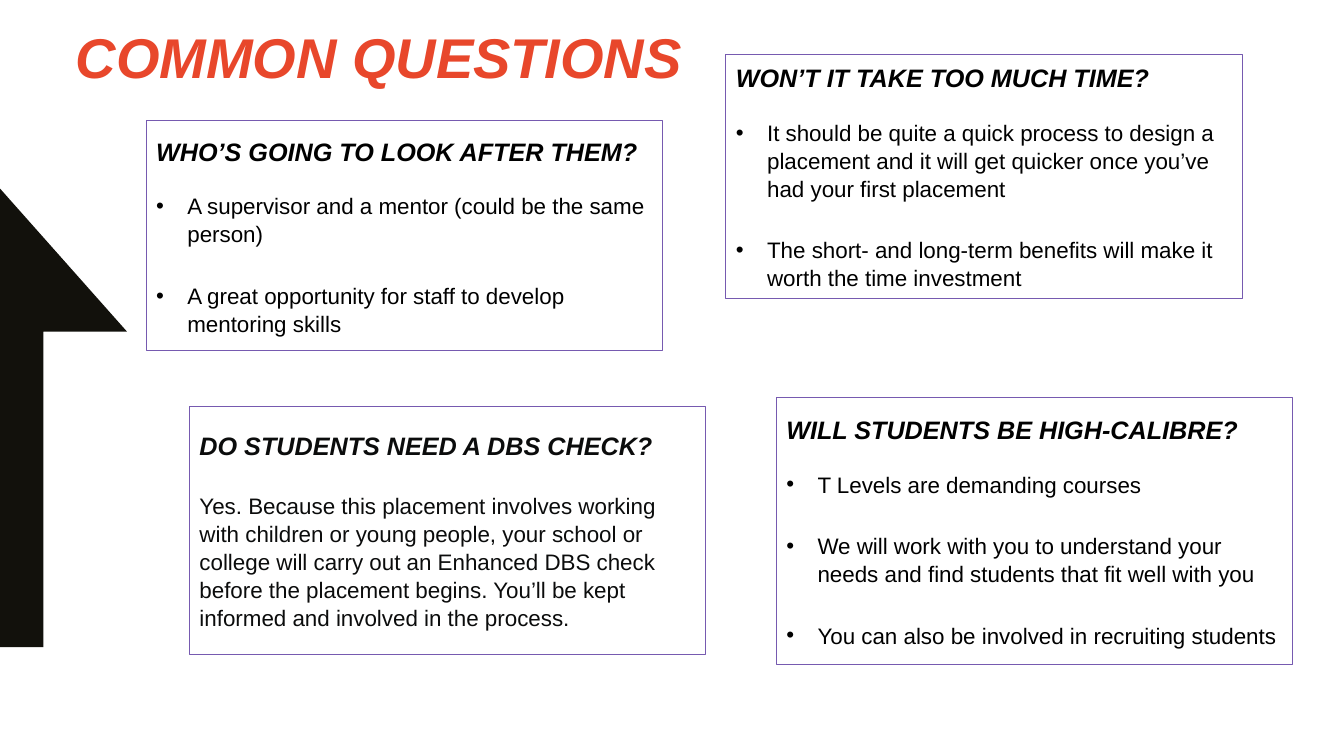
"""Build the Common Questions slide."""
from lxml.etree import SubElement
from pptx import Presentation
from pptx.dml.color import RGBColor
from pptx.enum.shapes import MSO_SHAPE
from pptx.enum.text import MSO_ANCHOR, MSO_AUTO_SIZE, PP_ALIGN
from pptx.oxml.ns import qn
from pptx.util import Inches, Pt

COLORS = {
    "title": "E8472B",
    "arrow": "12110C",
    "border": "765AB0",
    "text": "000000",
    "soft_text": "0B0C0C",
}


def write_paragraph(paragraph, text, size=16, color="text", strong=False,
                    before=None, after=0, line_spacing=1.04, bullet=False):
    """Fill a left-aligned paragraph with formatted text."""
    paragraph.text = text
    paragraph.alignment = PP_ALIGN.LEFT
    paragraph.line_spacing = line_spacing
    paragraph.space_after = Pt(after)
    if before is not None:
        paragraph.space_before = Pt(before)
    if bullet:
        properties = paragraph._p.get_or_add_pPr()
        properties.set("marL", str(Inches(0.31)))
        properties.set("indent", str(Inches(-0.31)))
        SubElement(properties, qn("a:buFont")).set("typeface", "Arial")
        SubElement(properties, qn("a:buChar")).set("char", "•")
    font = paragraph.font
    font.name = "Arial"
    font.size = Pt(size)
    font.bold = font.italic = strong
    font.color.rgb = RGBColor.from_string(COLORS[color])


presentation = Presentation()
presentation.slide_width = Inches(13.33)
presentation.slide_height = Inches(7.5)
slide = presentation.slides.add_slide(presentation.slide_layouts[5])

arrow_points = [(1.26, 3.29), (0, 1.87), (0, 6.42), (0.43, 6.42), (0.43, 3.29)]
corners = [(Inches(x), Inches(y)) for x, y in arrow_points]
builder = slide.shapes.build_freeform(*corners[0])
builder.add_line_segments(corners[1:], close=True)
arrow = builder.convert_to_shape()
arrow.shadow.inherit = False
arrow.fill.solid()
arrow.fill.fore_color.rgb = RGBColor.from_string(COLORS["arrow"])
arrow.line.fill.background()

title = slide.shapes.title
title.left, title.top = Inches(0.65), Inches(0.17)
title.width, title.height = Inches(6.6), Inches(0.77)
title.text_frame.auto_size = MSO_AUTO_SIZE.NONE
title.text_frame.vertical_anchor = MSO_ANCHOR.TOP
write_paragraph(title.text_frame.paragraphs[0], "COMMON QUESTIONS", size=40,
                color="title", strong=True, line_spacing=1.0)

bullet_format = {"before": 12, "after": 12, "bullet": True}
plain_format = {"before": 21.5, "color": "soft_text"}
questions = [
    (1.45, 1.2, 2.28, "WHO’S GOING TO LOOK AFTER THEM?", "text", 6, bullet_format, [
        "A supervisor and a mentor (could be the same person)",
        "A great opportunity for staff to develop mentoring skills",
    ]),
    (7.2, 0.54, 2.42, "WON’T IT TAKE TOO MUCH TIME?", "text", 6, bullet_format, [
        "It should be quite a quick process to design a placement and it will "
        "get quicker once you’ve had your first placement",
        "The short- and long-term benefits will make it worth the time investment",
    ]),
    (7.7, 3.94, 2.65, "WILL STUDENTS BE HIGH-CALIBRE?", "text", 6, bullet_format, [
        "T Levels are demanding courses",
        "We will work with you to understand your needs and find students that "
        "fit well with you",
        "You can also be involved in recruiting students",
    ]),
    (1.88, 4.03, 2.46, "DO STUDENTS NEED A DBS CHECK?", "soft_text", 0, plain_format, [
        "Yes. Because this placement involves working with children or young "
        "people, your school or college will carry out an Enhanced DBS check "
        "before the placement begins. You’ll be kept informed and involved in "
        "the process.",
    ]),
]
for left, top, height, question, color, after, answer_format, answers in questions:
    box = slide.shapes.add_shape(MSO_SHAPE.RECTANGLE, Inches(left), Inches(top),
                                 Inches(5.12), Inches(height))
    box.shadow.inherit = False
    box.fill.background()
    box.line.color.rgb = RGBColor.from_string(COLORS["border"])
    box.line.width = Pt(0.75)
    text_frame = box.text_frame
    text_frame.word_wrap = True
    text_frame.vertical_anchor = MSO_ANCHOR.MIDDLE
    write_paragraph(text_frame.paragraphs[0], question, size=18, color=color,
                    strong=True, after=after)
    for answer in answers:
        write_paragraph(text_frame.add_paragraph(), answer, **answer_format)

presentation.save("out.pptx")
